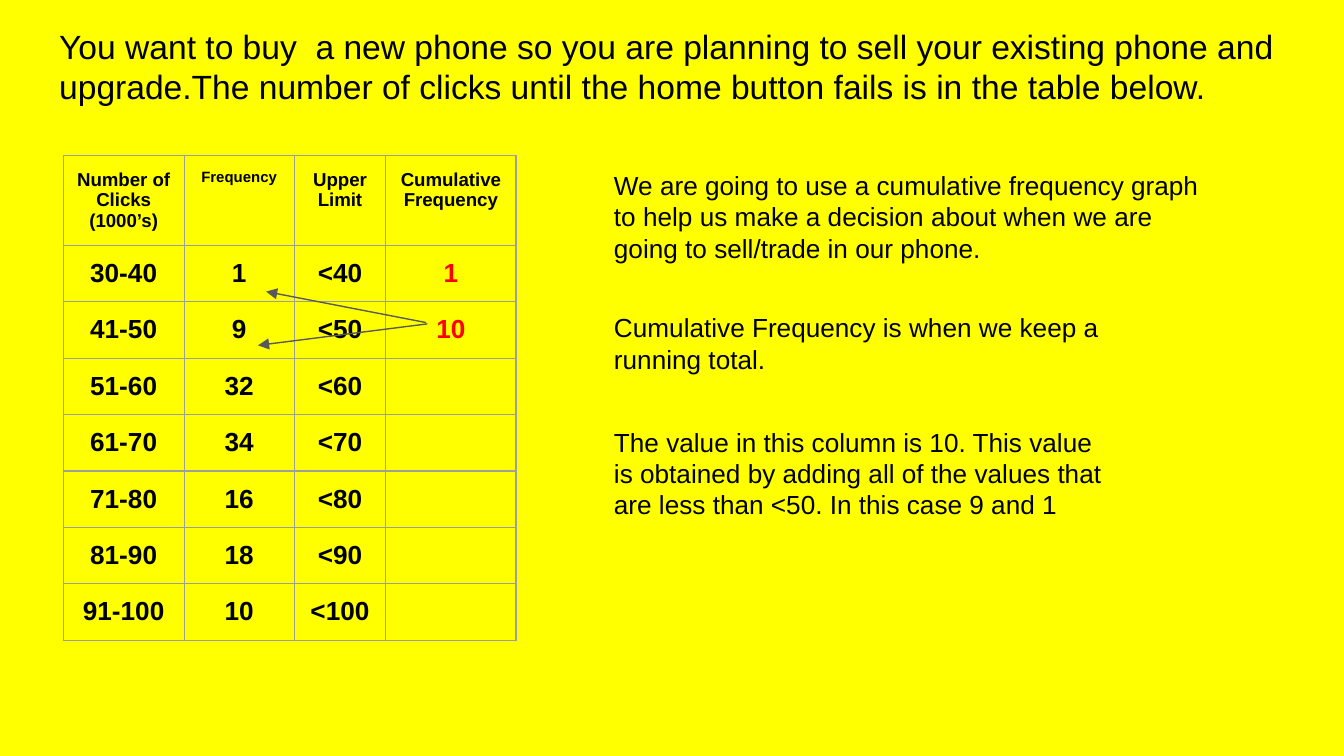
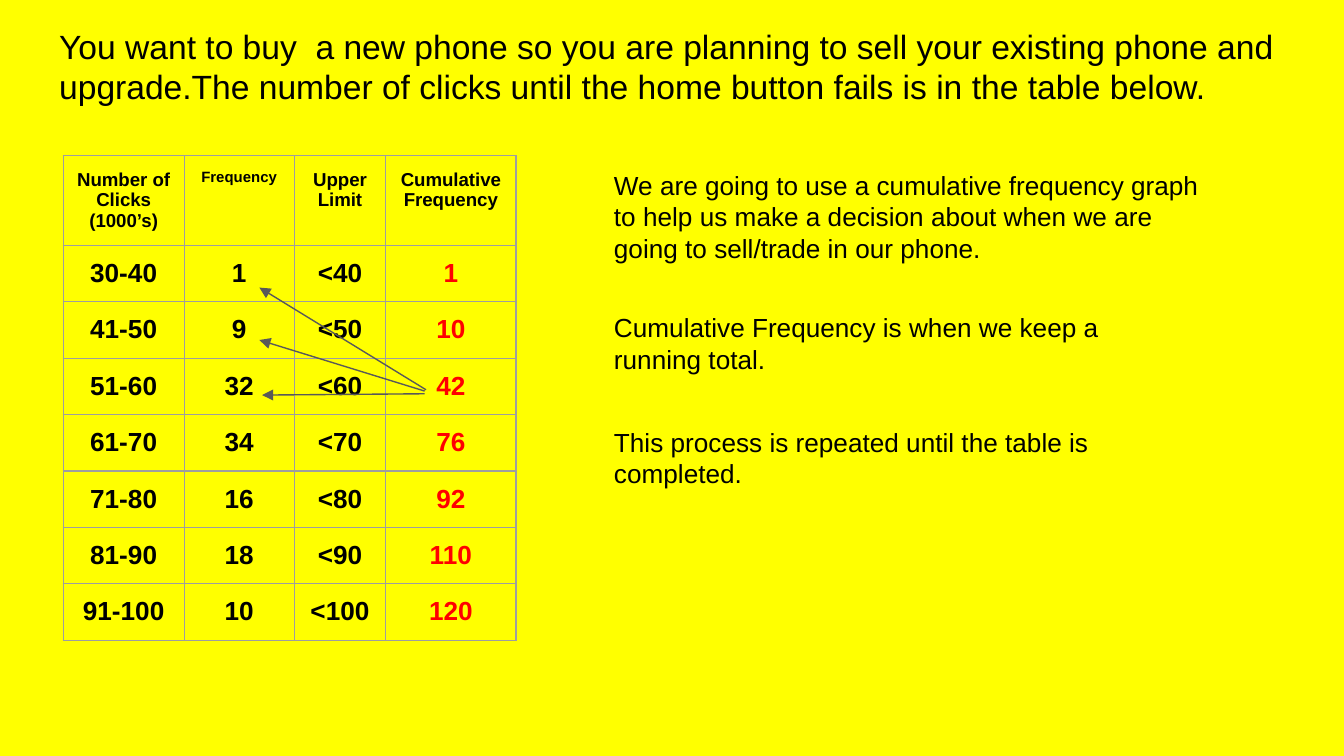
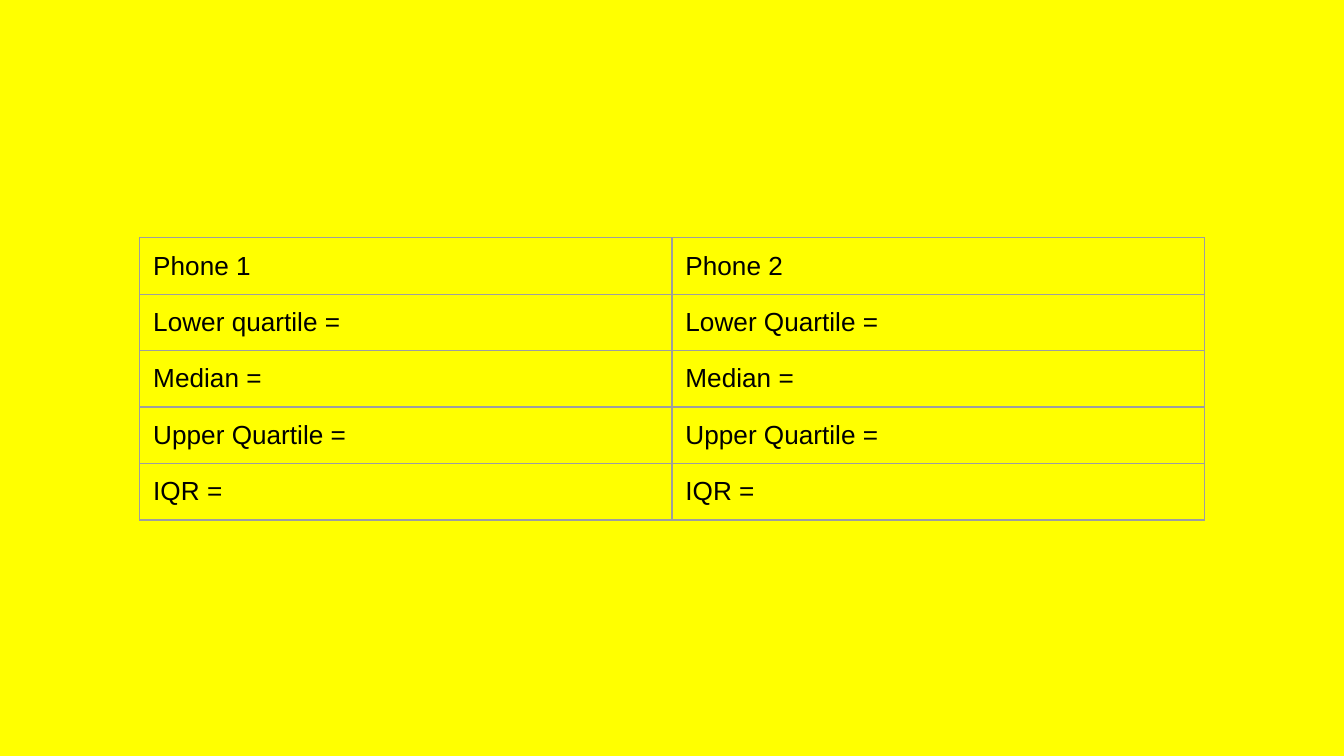
from lxml import etree
from pptx import Presentation
from pptx.dml.color import RGBColor
from pptx.enum.shapes import MSO_CONNECTOR
from pptx.enum.text import MSO_ANCHOR, MSO_AUTO_SIZE, PP_ALIGN
from pptx.oxml.ns import qn
from pptx.util import Inches, Pt

STRAIGHT = MSO_CONNECTOR.STRAIGHT
TOP = MSO_ANCHOR.TOP
LEFT, CENTER = PP_ALIGN.LEFT, PP_ALIGN.CENTER
NO_AUTOFIT = MSO_AUTO_SIZE.NONE

FONT = "Arial"
YELLOW, BLACK, RED = "FFFF00", "000000", "FF0000"
BORDER_GREY, ARROW_GREY = "9E9E9E", "595959"
MARGIN = Inches(0.1)
ROW_HEIGHT = 0.42

TITLE = ("You want to buy  a new phone so you are planning to sell your existing phone and "
         "upgrade.The number of clicks until the home button fails is in the table below.")
PURPOSE = ("We are going to use a cumulative frequency graph to help us make a decision about "
           "when we are going to sell/trade in our phone.")
DEFINITION = "Cumulative Frequency is when we keep a running total."
HEADERS = ["Number of Clicks (1000’s)", "Frequency", "Upper Limit", "Cumulative Frequency"]
HEADER_SIZES = [10, 8, 10, 10]
CLICKS = ["30-40", "41-50", "51-60", "61-70", "71-80", "81-90", "91-100"]
FREQUENCIES = [1, 9, 32, 34, 16, 18, 10]
LIMITS = ["<40", "<50", "<60", "<70", "<80", "<90", "<100"]

STEPS = [
    {
        "filled": 2,
        "note": ("The value in this column is 10. This value is obtained by adding all of the "
                 "values that are less than <50. In this case 9 and 1"),
        "note_height": 0.79,
        "arrows": [(3.17, 2.4, 1.98, 2.17), (3.18, 2.41, 1.92, 2.57)],
    },
    {
        "filled": 7,
        "note": "This process is repeated until the table is completed.",
        "note_height": 1.06,
        "arrows": [(3.17, 2.9, 1.93, 2.14), (3.16, 2.91, 1.93, 2.53), (3.16, 2.93, 1.95, 2.94)],
    },
]
QUARTILES = [
    ["Phone 1", "Phone 2"],
    ["Lower quartile =", "Lower Quartile ="],
    ["Median =", "Median ="],
    ["Upper Quartile =", "Upper Quartile ="],
    ["IQR =", "IQR ="],
]


def write(frame, text, size=14, color=BLACK, bold=False, align=LEFT):
    frame.word_wrap = True
    frame.margin_left = frame.margin_right = MARGIN
    frame.margin_top = frame.margin_bottom = MARGIN
    para = frame.paragraphs[0]
    para.alignment = align
    span = para.add_run()
    span.text = text
    span.font.name = FONT
    span.font.size = Pt(size)
    span.font.bold = bold
    span.font.color.rgb = RGBColor.from_string(color)


def add_grid(page, left, top, widths, heights):
    frame = page.shapes.add_table(len(heights), len(widths), Inches(left), Inches(top),
                                  Inches(sum(widths)), Inches(sum(heights)))
    table = frame.table
    table.first_row = table.horz_banding = False
    for column, width in zip(table.columns, widths):
        column.width = Inches(width)
    for row, height in zip(table.rows, heights):
        row.height = Inches(height)
    for cell in table.iter_cells():
        cell.margin_left = cell.margin_right = MARGIN
        cell.margin_top = cell.margin_bottom = MARGIN
        properties = cell._tc.get_or_add_tcPr()
        for side in ("a:lnL", "a:lnR", "a:lnT", "a:lnB"):
            line = etree.SubElement(properties, qn(side), w=str(Pt(0.75)))
            paint = etree.SubElement(line, qn("a:solidFill"))
            etree.SubElement(paint, qn("a:srgbClr"), val=BORDER_GREY)
        cell.fill.background()
    return table


deck = Presentation()
deck.slide_width = Inches(10)
deck.slide_height = Inches(10 * 9 / 16)
background = deck.slide_master.background.fill
background.solid()
background.fore_color.rgb = RGBColor.from_string(YELLOW)
title_layout, blank_layout = deck.slide_layouts[5], deck.slide_layouts[6]

for step in STEPS:
    page = deck.slides.add_slide(title_layout)
    title = page.shapes.title
    title.left, title.top = Inches(0.34), Inches(0.09)
    title.width, title.height = Inches(9.32), Inches(0.75)
    title.text_frame.auto_size = NO_AUTOFIT
    title.text_frame.vertical_anchor = TOP
    write(title.text_frame, TITLE, 18)
    write(title.text_frame, " ", 12)

    table = add_grid(page, 0.47, 1.16, [0.9, 0.82, 0.68, 0.97],
                     [0.66] + [ROW_HEIGHT] * len(CLICKS))
    for column, (header, size) in enumerate(zip(HEADERS, HEADER_SIZES)):
        write(table.cell(0, column).text_frame, header, size, bold=True, align=CENTER)
    total = 0
    for row, (clicks, frequency, limit) in enumerate(zip(CLICKS, FREQUENCIES, LIMITS), 1):
        for column, value in enumerate([clicks, str(frequency), limit]):
            write(table.cell(row, column).text_frame, value, bold=True, align=CENTER)
        total += frequency
        total_frame = table.cell(row, 3).text_frame
        if row <= step["filled"]:
            write(total_frame, str(total), color=RED, bold=True, align=CENTER)
        else:
            blank = etree.SubElement(total_frame.paragraphs[0]._p, qn("a:endParaRPr"), sz="1200")
            etree.SubElement(blank, qn("a:latin"), typeface=FONT)

    notes = [
        (PURPOSE, 1.16, 4.6, 0.93),
        (DEFINITION, 2.22, 4.3, 0.6),
        (step["note"], 3.07, 3.93, step["note_height"]),
    ]
    for text, top, width, height in notes:
        box = page.shapes.add_textbox(Inches(4.47), Inches(top), Inches(width), Inches(height))
        write(box.text_frame, text)

    for ends in step["arrows"]:
        arrow = page.shapes.add_connector(STRAIGHT, *[Inches(end) for end in ends])
        arrow.line.color.rgb = RGBColor.from_string(ARROW_GREY)
        arrow.line.width = Pt(0.75)
        etree.SubElement(arrow.line._get_or_add_ln(), qn("a:tailEnd"),
                         type="triangle", w="med", len="med")
        etree.SubElement(arrow._element.spPr, qn("a:effectLst"))

page = deck.slides.add_slide(blank_layout)
table = add_grid(page, 1.04, 1.77, [3.96, 3.96], [ROW_HEIGHT] * len(QUARTILES))
for row, labels in enumerate(QUARTILES):
    for column, label in enumerate(labels):
        write(table.cell(row, column).text_frame, label)

deck.save("out.pptx")
